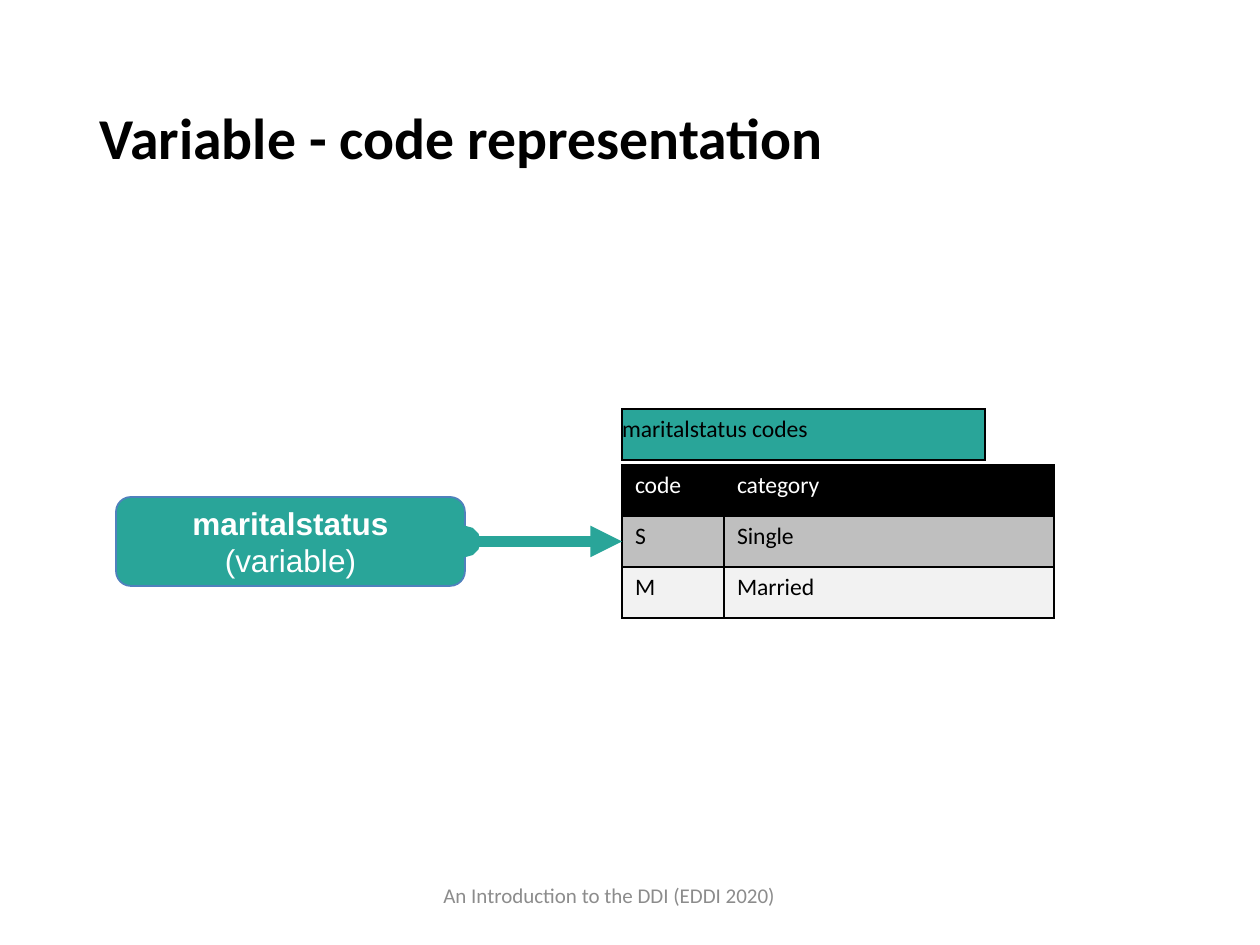
from lxml.etree import SubElement
from pptx import Presentation
from pptx.dml.color import RGBColor
from pptx.enum.shapes import MSO_CONNECTOR, MSO_SHAPE
from pptx.enum.text import MSO_ANCHOR, PP_ALIGN
from pptx.oxml.ns import qn
from pptx.util import Pt

PX = 914400 / 126
COLORS = {"teal": "29A599", "blue": "4F81BD", "black": "000000", "white": "FFFFFF",
          "mid": "BFBFBF", "light": "F2F2F2", "gray": "8C8C8C"}

TITLE = "Variable - code representation"
FOOTER = "An Introduction to the DDI (EDDI 2020)"
VARIABLE = [("maritalstatus", True), ("(variable)", False)]
TABLES = [
    {"at": (622, 465), "cols": (102, 330), "inset": 13,
     "rows": [(("code", "category"), "black", "white"),
              (("S", "Single"), "mid", "black"),
              (("M", "Married"), "light", "black")]},
    {"at": (622, 409), "cols": (363,), "inset": 0,
     "rows": [(("maritalstatus codes",), "teal", "black")]},
]
ROW_H = 51
BOX = (116, 497, 349, 89)


def px(n):
    return round(n * PX)


def rgb(name):
    return RGBColor.from_string(COLORS[name])


def write(p, text, size=13.5, color="black", font="Calibri", bold=False):
    r = p.add_run()
    r.text = text
    r.font.size = Pt(size)
    r.font.name = font
    r.font.bold = bold
    r.font.color.rgb = rgb(color)


def add_text(s, text, at, anchor=MSO_ANCHOR.TOP, spacing=None, **fmt):
    tf = s.shapes.add_textbox(*map(px, at)).text_frame
    tf.word_wrap = True
    tf.vertical_anchor = anchor
    p = tf.paragraphs[0]
    p.line_spacing = spacing
    write(p, text, **fmt)


def add_borders(cell):
    tc_pr = cell._tc.get_or_add_tcPr()
    for i, side in enumerate(("lnL", "lnR", "lnT", "lnB")):
        ln = tc_pr.makeelement(qn(f"a:{side}"), {"w": str(Pt(1))})
        fill = SubElement(ln, qn("a:solidFill"))
        SubElement(fill, qn("a:srgbClr"), val=COLORS["black"])
        tc_pr.insert(i, ln)


def add_codes(s, at, cols, inset, rows):
    size = sum(cols), ROW_H * len(rows)
    table = s.shapes.add_table(len(rows), len(cols), *map(px, at + size)).table
    for col, width in zip(table.columns, cols):
        col.width = px(width)
    for i, (texts, fill, color) in enumerate(rows):
        table.rows[i].height = px(ROW_H)
        for j, text in enumerate(texts):
            cell = table.cell(i, j)
            cell.margin_left = px(inset)
            cell.fill.solid()
            cell.fill.fore_color.rgb = rgb(fill)
            add_borders(cell)
            write(cell.text_frame.paragraphs[0], text, color=color)


def add_variable(s):
    sp = s.shapes.add_shape(MSO_SHAPE.ROUNDED_RECTANGLE, *map(px, BOX))
    sp.shadow.inherit = False
    sp.fill.solid()
    sp.fill.fore_color.rgb = rgb("teal")
    sp.line.color.rgb = rgb("blue")
    sp.line.width = Pt(1)
    tf = sp.text_frame
    tf.word_wrap = True
    tf.vertical_anchor = MSO_ANCHOR.MIDDLE
    p = tf.paragraphs[0]
    p.alignment = PP_ALIGN.CENTER
    for i, (text, bold) in enumerate(VARIABLE):
        if i:
            p.add_line_break()
        write(p, text, size=18, color="white", font="Arial", bold=bold)


def add_arrow(s):
    x, y, w, h = BOX
    mid = y + h / 2
    ends = (x + w, mid, TABLES[0]["at"][0], mid)
    arrow = s.shapes.add_connector(MSO_CONNECTOR.STRAIGHT, *map(px, ends))
    arrow.line.color.rgb = rgb("teal")
    arrow.line.width = Pt(6)
    ln = arrow.line._get_or_add_ln()
    SubElement(ln, qn("a:headEnd"), type="oval")
    SubElement(ln, qn("a:tailEnd"), type="triangle")
    SubElement(arrow._element.spPr, qn("a:effectLst"))


def main():
    prs = Presentation()
    prs.slide_width, prs.slide_height = px(1260), px(945)
    s = prs.slides.add_slide(prs.slide_layouts[6])
    add_text(s, TITLE, (87, 49, 1091, 183), anchor=MSO_ANCHOR.MIDDLE, spacing=0.9,
             size=33, bold=True)
    for table in TABLES:
        add_codes(s, **table)
    add_variable(s)
    add_arrow(s)
    add_text(s, FOOTER, (431, 876, 399, 50), size=12, color="gray")
    prs.save("out.pptx")


if __name__ == "__main__":
    main()
